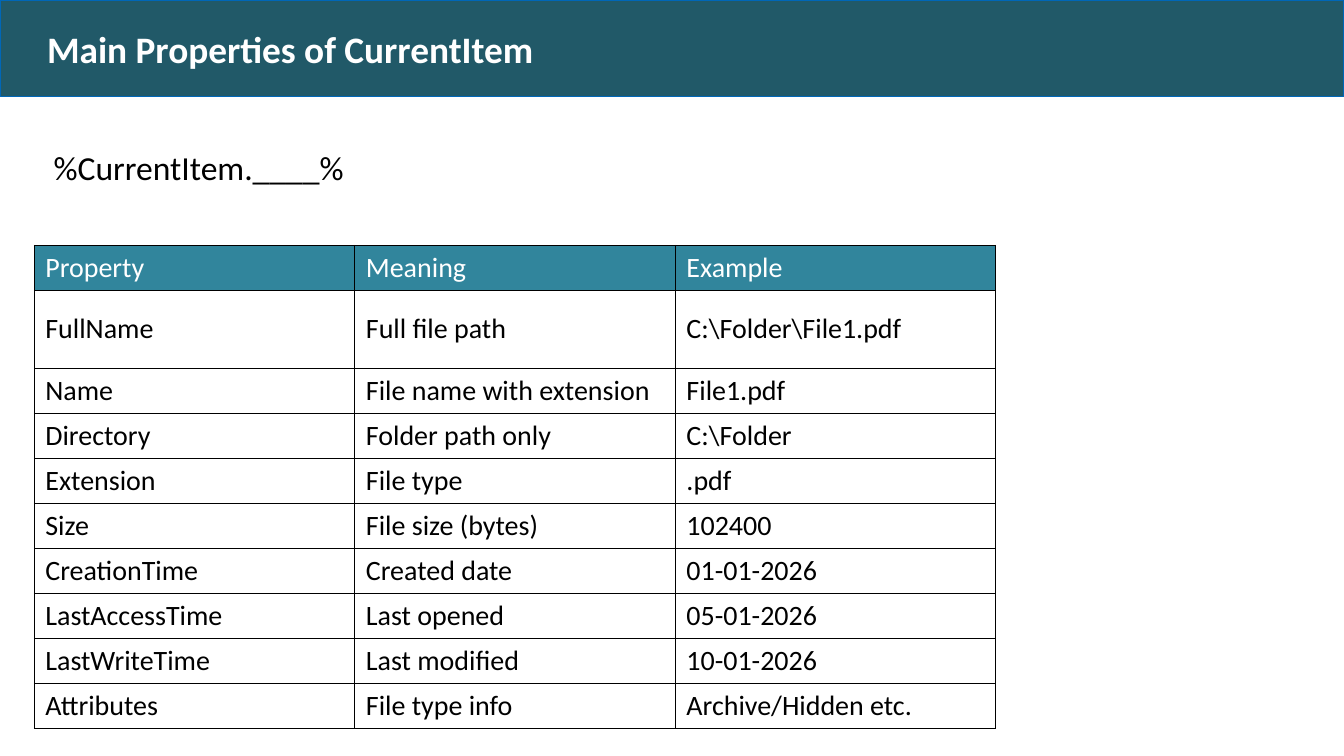
from dataclasses import dataclass

from lxml import etree
from pptx import Presentation
from pptx.dml.color import RGBColor
from pptx.enum.shapes import MSO_SHAPE
from pptx.enum.text import MSO_ANCHOR, MSO_AUTO_SIZE, PP_ALIGN
from pptx.oxml.ns import qn
from pptx.util import Pt

RECTANGLE = MSO_SHAPE.RECTANGLE
MIDDLE = MSO_ANCHOR.MIDDLE
NO_AUTOFIT = MSO_AUTO_SIZE.NONE
GROW_TO_FIT = MSO_AUTO_SIZE.SHAPE_TO_FIT_TEXT
LEFT = PP_ALIGN.LEFT


@dataclass(frozen=True)
class Theme:
    """Colours, font and type sizes of the slide."""
    font: str = "Calibri"
    band: str = "215968"
    band_edge: str = "0067B8"
    header: str = "31859C"
    light: str = "FFFFFF"
    dark: str = "000000"
    title_size: int = 40
    syntax_size: int = 36
    table_size: int = 30


THEME = Theme()
SLIDE_WIDTH, SLIDE_HEIGHT = 1440, 810
BAND_HEIGHT = 103.7
MARGIN = 50.4
TABLE_LEFT, TABLE_TOP = 36.6, 262.8
COLUMN_WIDTH = 343.5
ROW_HEIGHT, TALL_ROW_HEIGHT = 48.2, 83.5
TALL_ROW = 1
CELL_INSET_X, CELL_INSET_Y = 12, 5.76

PROPERTIES = [
    ("Property", "Meaning", "Example"),
    ("FullName", "Full file path", "C:\\Folder\\File1.pdf"),
    ("Name", "File name with extension", "File1.pdf"),
    ("Directory", "Folder path only", "C:\\Folder"),
    ("Extension", "File type", ".pdf"),
    ("Size", "File size (bytes)", "102400"),
    ("CreationTime", "Created date", "01-01-2026"),
    ("LastAccessTime", "Last opened", "05-01-2026"),
    ("LastWriteTime", "Last modified", "10-01-2026"),
    ("Attributes", "File type info", "Archive/Hidden etc."),
]


def write(frame, text, size, color, bold=False):
    """Put one formatted run into the first paragraph of a text frame."""
    paragraph = frame.paragraphs[0]
    paragraph.alignment = LEFT
    run = paragraph.add_run()
    run.text = text
    run.font.name = THEME.font
    run.font.size = Pt(size)
    run.font.bold = bold
    run.font.color.rgb = RGBColor.from_string(color)


def set_insets(holder, horizontal, vertical):
    """Set the inner margins of a text frame or table cell."""
    holder.margin_left = holder.margin_right = Pt(horizontal)
    holder.margin_top = holder.margin_bottom = Pt(vertical)


def add_band(slide):
    """Draw the title band behind everything else."""
    band = slide.shapes.add_shape(RECTANGLE, 0, 0, Pt(SLIDE_WIDTH), Pt(BAND_HEIGHT))
    band.shadow.inherit = False
    band.fill.solid()
    band.fill.fore_color.rgb = RGBColor.from_string(THEME.band)
    band.line.color.rgb = RGBColor.from_string(THEME.band_edge)
    band.line.width = Pt(1)
    slide.shapes._spTree.insert(2, band._element)


def set_title(slide, text):
    """Place the title over the band and fill it in."""
    title = slide.shapes.title
    title.left, title.top = Pt(MARGIN), Pt(0)
    title.width, title.height = Pt(SLIDE_WIDTH - 2 * MARGIN), Pt(BAND_HEIGHT)
    frame = title.text_frame
    frame.auto_size = NO_AUTOFIT
    frame.vertical_anchor = MIDDLE
    set_insets(frame, 0, 0)
    write(frame, text, THEME.title_size, THEME.light, bold=True)


def add_syntax(slide, text):
    """Add the line that shows how a property is referenced."""
    syntax = slide.shapes.add_textbox(Pt(MARGIN), Pt(154), Pt(721.4), Pt(51))
    frame = syntax.text_frame
    frame.word_wrap = True
    frame.auto_size = GROW_TO_FIT
    write(frame, text, THEME.syntax_size, THEME.dark)


def add_borders(cell):
    """Outline a table cell on all four sides."""
    properties = cell._tc.get_or_add_tcPr()
    for side in ("lnL", "lnR", "lnT", "lnB"):
        border = etree.SubElement(properties, qn(f"a:{side}"), w=str(Pt(1)))
        fill = etree.SubElement(border, qn("a:solidFill"))
        etree.SubElement(fill, qn("a:srgbClr"), val=THEME.dark)


def format_cell(cell, text, is_header):
    """Fill in and style one table cell."""
    add_borders(cell)
    set_insets(cell, CELL_INSET_X, CELL_INSET_Y)
    cell.vertical_anchor = MIDDLE
    if is_header:
        cell.fill.solid()
        cell.fill.fore_color.rgb = RGBColor.from_string(THEME.header)
    else:
        cell.fill.background()
    color = THEME.light if is_header else THEME.dark
    write(cell.text_frame, text, THEME.table_size, color)


def add_property_table(slide, rows):
    """Add the property table with a coloured header row."""
    heights = [TALL_ROW_HEIGHT if i == TALL_ROW else ROW_HEIGHT for i in range(len(rows))]
    column_count = len(rows[0])
    table = slide.shapes.add_table(
        len(rows), column_count, Pt(TABLE_LEFT), Pt(TABLE_TOP),
        Pt(column_count * COLUMN_WIDTH), Pt(sum(heights))).table
    table.horz_banding = False
    for column in table.columns:
        column.width = Pt(COLUMN_WIDTH)
    for row_index, (values, height) in enumerate(zip(rows, heights)):
        table.rows[row_index].height = Pt(height)
        for column_index, value in enumerate(values):
            format_cell(table.cell(row_index, column_index), value, row_index == 0)


def main():
    """Build and save the slide."""
    deck = Presentation()
    deck.slide_width, deck.slide_height = Pt(SLIDE_WIDTH), Pt(SLIDE_HEIGHT)
    slide = deck.slides.add_slide(deck.slide_layouts[5])
    add_band(slide)
    set_title(slide, "Main Properties of CurrentItem")
    add_property_table(slide, PROPERTIES)
    add_syntax(slide, "%CurrentItem.____%")
    deck.save("out.pptx")


if __name__ == "__main__":
    main()
